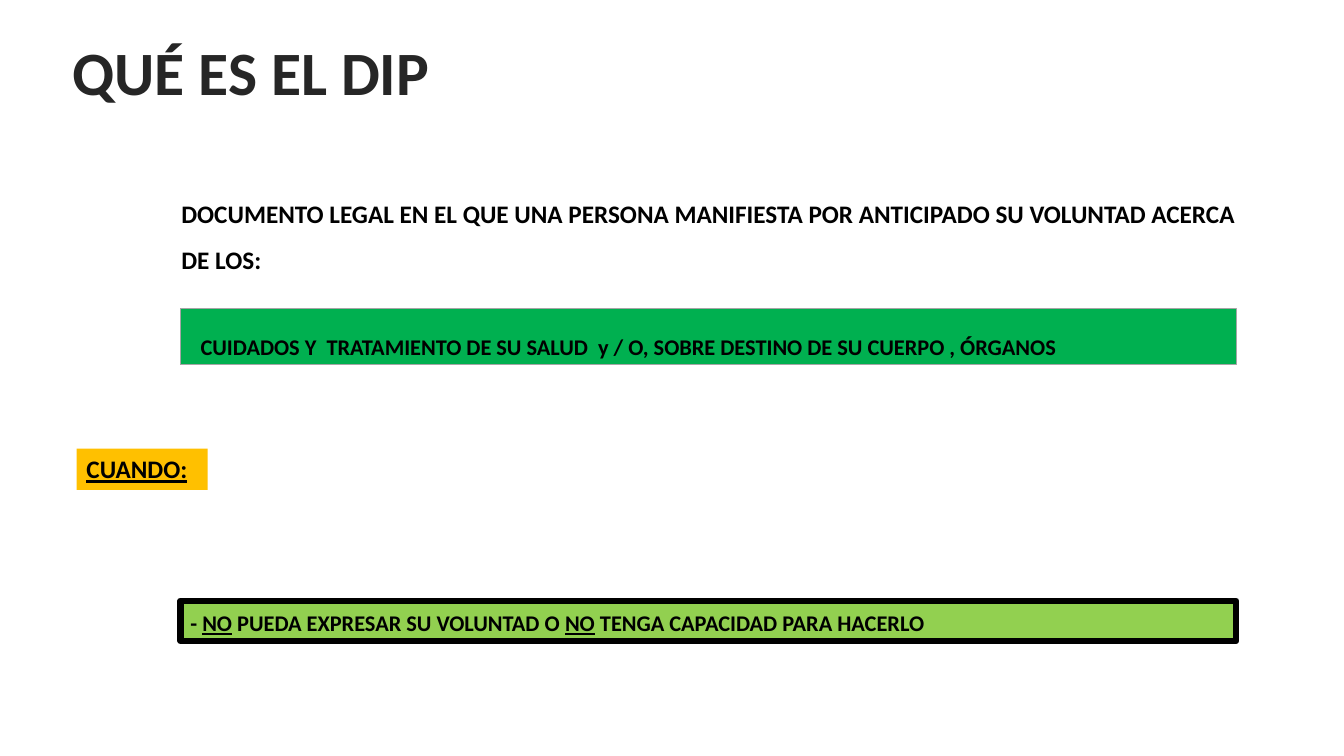
from pptx import Presentation
from pptx import util as u
from pptx.dml.color import RGBColor
from pptx.enum import shapes, text

COLORS = {
    "black": "000000",
    "title": "262626",
    "green": "00B050",
    "lime": "92D050",
    "amber": "FFC000",
    "grey": "A5A5A5",
}
LEFT, WIDTH = 1.79, 10.47


def color(name):
    return RGBColor.from_string(COLORS[name])


def place(box, left, top, width, height):
    box.left, box.top = u.Inches(left), u.Inches(top)
    box.width, box.height = u.Inches(width), u.Inches(height)


def write(box, spans, size, tone="black", spacing=1.0,
          align=text.PP_ALIGN.LEFT, anchor=text.MSO_ANCHOR.TOP, wrap=True):
    frame = box.text_frame
    frame.word_wrap = wrap
    frame.auto_size = text.MSO_AUTO_SIZE.NONE
    frame.vertical_anchor = anchor
    para = frame.paragraphs[0]
    para.alignment = align
    para.line_spacing = spacing
    for words, underlined in spans:
        span = para.add_run()
        span.text = words
        span.font.name = "Calibri"
        span.font.size = u.Pt(size)
        span.font.bold = True
        span.font.underline = underlined
        span.font.color.rgb = color(tone)


def add_title(page, words):
    title = page.shapes.title
    place(title, 0.6, 0.29, 3.78, 0.84)
    write(title, [(words, False)], 44, "title",
          align=text.PP_ALIGN.CENTER, wrap=False)


def add_statement(page, words):
    box = page.shapes.add_textbox(0, 0, 0, 0)
    place(box, 1.7, 1.77, 10.73, 1.01)
    write(box, [(words, False)], 18, spacing=1.5)


def add_band(page, area, fill, spans, size, line=None, line_width=0,
             inset=0.1, **layout):
    band = page.shapes.add_shape(shapes.MSO_SHAPE.RECTANGLE, 0, 0, 0, 0)
    place(band, *area)
    band.shadow.inherit = False
    band.fill.solid()
    band.fill.fore_color.rgb = color(fill)
    if line:
        band.line.color.rgb = color(line)
        band.line.width = u.Pt(line_width)
    else:
        band.line.fill.background()
    band.text_frame.margin_left = u.Inches(inset)
    write(band, spans, size, **layout)


def main():
    deck = Presentation()
    deck.slide_width, deck.slide_height = u.Inches(13.33), u.Inches(7.5)
    page = deck.slides.add_slide(deck.slide_layouts[5])

    add_title(page, "QUÉ ES EL DIP")
    add_statement(page, "DOCUMENTO LEGAL EN EL QUE UNA PERSONA MANIFIESTA "
                        "POR ANTICIPADO SU VOLUNTAD ACERCA DE LOS:")
    add_band(page, (LEFT, 3.06, WIDTH, 0.56), "green",
             [("CUIDADOS Y  TRATAMIENTO DE SU SALUD  y / O, "
               "SOBRE DESTINO DE SU CUERPO , ÓRGANOS", False)],
             16, "grey", 0.5, inset=0.2, spacing=1.5,
             anchor=text.MSO_ANCHOR.BOTTOM)
    add_band(page, (0.76, 4.45, 1.3, 0.41), "amber", [("CUANDO:", True)], 18)
    add_band(page, (LEFT, 5.96, WIDTH, 0.4), "lime",
             [("- ", False), ("NO", True),
              (" PUEDA EXPRESAR SU VOLUNTAD O ", False), ("NO", True),
              (" TENGA CAPACIDAD PARA HACERLO", False)],
             16, "black", 4.5, anchor=text.MSO_ANCHOR.BOTTOM)

    deck.save("out.pptx")


if __name__ == "__main__":
    main()
